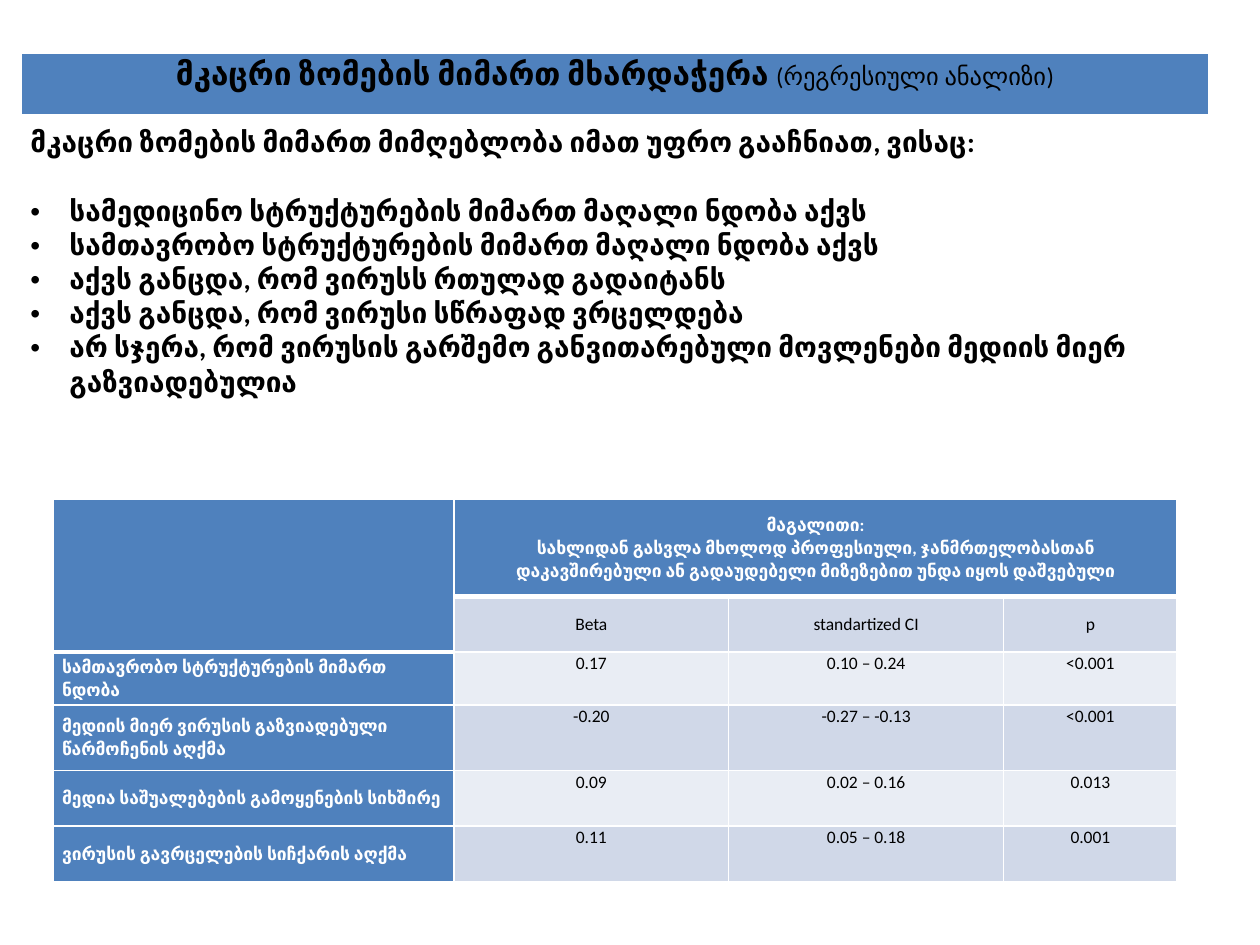
from lxml import etree
from pptx import Presentation
from pptx import util as u
from pptx.dml.color import RGBColor
from pptx.enum import text
from pptx.oxml.ns import qn

BLUE = RGBColor(0x4F, 0x81, 0xBD)
BAND = RGBColor(0xD0, 0xD8, 0xE8)
PALE = RGBColor(0xE9, 0xED, 0xF4)
WHITE = RGBColor(0xFF, 0xFF, 0xFF)
BLACK = RGBColor(0, 0, 0)
CENTER, LEFT = text.PP_ALIGN.CENTER, text.PP_ALIGN.LEFT
MIDDLE, TOP = text.MSO_ANCHOR.MIDDLE, text.MSO_ANCHOR.TOP


def write(p, words, size=10, bold=False, color=BLACK, align=CENTER, spacing=1.07):
    """Add a run to p and set the paragraph's layout."""
    p.alignment, p.line_spacing = align, spacing
    r = p.add_run()
    r.text = words
    r.font.name, r.font.size, r.font.bold = "Calibri", u.Pt(size), bold
    r.font.color.rgb = color


def style(cell, fill, bottom=1, anchor=TOP):
    """Give a cell white borders, a fill, insets and an anchor."""
    tcPr = cell._tc.get_or_add_tcPr()
    for side, width in (("L", 1), ("R", 1), ("T", 1), ("B", bottom)):
        ln = etree.SubElement(tcPr, qn(f"a:ln{side}"), w=str(u.Pt(width)))
        solid = etree.SubElement(ln, qn("a:solidFill"))
        etree.SubElement(solid, qn("a:srgbClr"), val=str(WHITE))
    cell.fill.solid()
    cell.fill.fore_color.rgb = fill
    cell.margin_left = cell.margin_right = u.Cm(0.18)
    cell.margin_top = cell.margin_bottom = 0
    cell.vertical_anchor = anchor


prs = Presentation()
prs.slide_width, prs.slide_height = u.Cm(25.4), u.Cm(19.05)
s = prs.slides.add_slide(prs.slide_layouts[6])

# Three stacked tables: left, top, column widths, row heights
layouts = [
    (0.43, 1.07, [23.93], [1.27]),
    (0.43, 2.54, [23.93], [7.52]),
    (1.07, 10.06, [8.08, 5.54, 5.54, 3.5], [1.96, 1.12, 1.07, 1.32, 1.12, 1.12]),
]
tables = []
for left, top, widths, heights in layouts:
    tbl = s.shapes.add_table(len(heights), len(widths), u.Cm(left), u.Cm(top),
                             u.Cm(sum(widths)), u.Cm(sum(heights))).table
    tbl.first_row = tbl.horz_banding = False
    for col, width in zip(tbl.columns, widths):
        col.width = u.Cm(width)
    for row, height in zip(tbl.rows, heights):
        row.height = u.Cm(height)
    tables.append(tbl)
title, findings, results = tables

# Title bar
cell = title.cell(0, 0)
style(cell, BLUE, bottom=3)
p = cell.text_frame.paragraphs[0]
write(p, "მკაცრი ზომების მიმართ მხარდაჭერა ", size=18, bold=True)
write(p, "(რეგრესიული ანალიზი)", size=14)

# Findings
cell = findings.cell(0, 0)
style(cell, WHITE, bottom=3)
tf = cell.text_frame
body = dict(size=16, bold=True, align=LEFT, spacing=1.0)
p = tf.paragraphs[0]
write(p, "მკაცრი ზომების მიმართ მიმღებლობა იმათ უფრო გააჩნიათ, ვისაც:", **body)
p.space_after = u.Pt(19.5)
for finding in [
    "სამედიცინო სტრუქტურების მიმართ მაღალი ნდობა აქვს",
    "სამთავრობო სტრუქტურების მიმართ მაღალი ნდობა აქვს",
    "აქვს განცდა, რომ ვირუსს რთულად გადაიტანს",
    "აქვს განცდა, რომ ვირუსი სწრაფად ვრცელდება",
    "არ სჯერა, რომ ვირუსის გარშემო განვითარებული მოვლენები მედიის მიერ გაზვიადებულია",
]:
    p = tf.add_paragraph()
    write(p, finding, **body)
    pPr = p._p.get_or_add_pPr()
    pPr.set("marL", str(u.Cm(0.79)))
    pPr.set("indent", str(-u.Cm(0.79)))
    etree.SubElement(pPr, qn("a:buFont"), typeface="Arial")
    etree.SubElement(pPr, qn("a:buChar"), char="•")

# Regression results
results.cell(0, 0).merge(results.cell(1, 0))
results.cell(0, 1).merge(results.cell(0, 3))
for c in range(4):
    style(results.cell(0, c), BLUE, bottom=3, anchor=MIDDLE)
style(results.cell(1, 0), BLUE, bottom=3)

tf = results.cell(0, 1).text_frame
write(tf.paragraphs[0], "მაგალითი:", bold=True, color=WHITE)
write(tf.add_paragraph(),
      "სახლიდან გასვლა მხოლოდ პროფესიული, ჯანმრთელობასთან დაკავშირებული "
      "ან გადაუდებელი მიზეზებით უნდა იყოს დაშვებული", bold=True, color=WHITE)

for c, heading in enumerate(["Beta", "standartized CI", "p"], 1):
    cell = results.cell(1, c)
    style(cell, BAND, anchor=MIDDLE)
    write(cell.text_frame.paragraphs[0], heading)

predictors = [
    ("სამთავრობო სტრუქტურების მიმართ ნდობა", "0.17", "0.10 – 0.24", "<0.001"),
    ("მედიის მიერ ვირუსის გაზვიადებული წარმოჩენის აღქმა", "-0.20", "-0.27 – -0.13", "<0.001"),
    ("მედია საშუალებების გამოყენების სიხშირე", "0.09", "0.02 – 0.16", "0.013"),
    ("ვირუსის გავრცელების სიჩქარის აღქმა", "0.11", "0.05 – 0.18", "0.001"),
]
for i, (name, *values) in enumerate(predictors, 2):
    cell = results.cell(i, 0)
    style(cell, BLUE, anchor=MIDDLE)
    write(cell.text_frame.paragraphs[0], name, bold=True, color=WHITE, align=LEFT)
    for c, value in enumerate(values, 1):
        cell = results.cell(i, c)
        style(cell, BAND if i % 2 else PALE)
        write(cell.text_frame.paragraphs[0], value)

prs.save("out.pptx")
